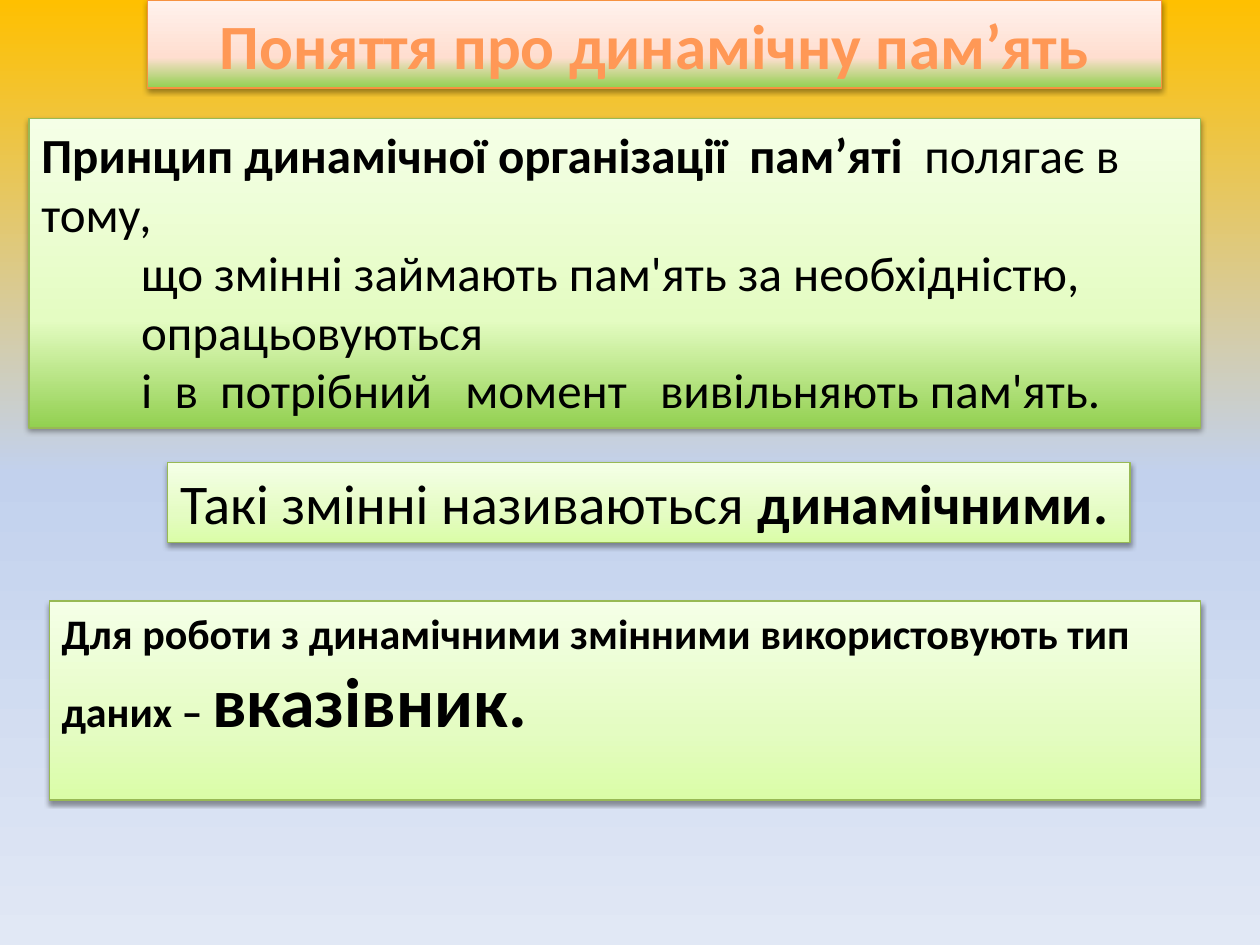
from lxml import etree
from pptx import Presentation
from pptx.dml.color import RGBColor
from pptx.enum import shapes, text
from pptx.oxml.ns import qn
from pptx.util import Pt

BLACK = RGBColor(0, 0, 0)
ORANGE = RGBColor(0xFF, 0x98, 0x56)
ORANGE_LINE = RGBColor(0xF6, 0x92, 0x40)
GREEN_LINE = RGBColor(0x98, 0xB9, 0x55)
GREEN = RGBColor(0x92, 0xD0, 0x50)
LIME = RGBColor(0xDA, 0xFD, 0xA7)
PALE_LIME = RGBColor(0xE4, 0xFC, 0xC2)
MIST = RGBColor(0xF5, 0xFF, 0xE7)
PEACH = RGBColor(0xFF, 0xDE, 0xD0)
BLUSH = RGBColor(0xFF, 0xF2, 0xED)
GOLD = RGBColor(0xFF, 0xC0, 0x00)
SKY = RGBColor(0xC2, 0xD1, 0xED)
PALE_SKY = RGBColor(0xE1, 0xE8, 0xF5)

TITLE_FILL = (0, GREEN), (35, PEACH), (100, BLUSH)
GREEN_FILL = (0, GREEN), (35, PALE_LIME), (100, MIST)
LIME_FILL = (0, LIME), (35, PALE_LIME), (100, MIST)
SKY_FILL = (0, GOLD), (50, SKY), (100, PALE_SKY)


def set_gradient(owner, element, stops, angle):
    """Fill with (percent, colour) stops; angle runs counter-clockwise."""
    owner.fill.gradient()
    owner.fill.gradient_angle = angle
    stop_list = next(element.iter(qn("a:gsLst")))
    for old in list(stop_list):
        stop_list.remove(old)
    for percent, color in stops:
        gs = etree.SubElement(stop_list, qn("a:gs"), pos=str(percent * 1000))
        etree.SubElement(gs, qn("a:srgbClr"), val=str(color))


def add_shadow(sp):
    sp.shadow.inherit = False
    effects = sp._element.spPr.find(qn("a:effectLst"))
    outer = etree.SubElement(effects, qn("a:outerShdw"), blurRad=str(Pt(3.1)),
                             dist=str(Pt(1.6)), dir="5400000", rotWithShape="0")
    color = etree.SubElement(outer, qn("a:srgbClr"), val=str(BLACK))
    etree.SubElement(color, qn("a:alpha"), val="38000")


def add_panel(s, box, stops, line, paragraphs, color=BLACK,
              align=text.PP_ALIGN.LEFT, anchor=text.MSO_ANCHOR.TOP):
    """Each paragraph is (left indent, [(words, size, bold), ...])."""
    sp = s.shapes.add_shape(shapes.MSO_SHAPE.RECTANGLE, *map(Pt, box))
    set_gradient(sp, sp._element, stops, 90)
    sp.line.color.rgb = line
    sp.line.width = Pt(0.75)
    add_shadow(sp)
    tf = sp.text_frame
    tf.word_wrap = True
    tf.vertical_anchor = anchor
    for i, (indent, runs) in enumerate(paragraphs):
        p = tf.add_paragraph() if i else tf.paragraphs[0]
        p.alignment = align
        if indent:
            p._p.get_or_add_pPr().set("marL", str(Pt(indent)))
        for words, size, bold in runs:
            r = p.add_run()
            r.text = words
            r.font.color.rgb = color
            for name, value in dict(name="Calibri", size=Pt(size), bold=bold).items():
                setattr(r.font, name, value)


def add_title(s, box):
    add_panel(s, box, TITLE_FILL, ORANGE_LINE,
              [(0, [("Поняття про динамічну пам’ять", 36, True)])],
              ORANGE, text.PP_ALIGN.CENTER, text.MSO_ANCHOR.MIDDLE)


def add_principle(s, box):
    details = ["що змінні займають пам'ять за необхідністю,",
               "опрацьовуються",
               "і  в  потрібний   момент   вивільняють пам'ять."]
    opening = [("Принцип динамічної організації  пам’яті", 28, True),
               ("  полягає в тому,", 28, False)]
    add_panel(s, box, GREEN_FILL, GREEN_LINE,
              [(0, opening)] + [(57, [(d, 28, False)]) for d in details])


def add_term(s, box):
    add_panel(s, box, LIME_FILL, GREEN_LINE,
              [(0, [("Такі змінні називаються ", 32, False),
                    ("динамічними.", 32, True)])])


def add_pointer_type(s, box):
    add_panel(s, box, LIME_FILL, GREEN_LINE,
              [(0, [("Для роботи з динамічними змінними використовують тип даних – ",
                     24, True), ("вказівник.", 40, True)])])


def main():
    prs = Presentation()
    prs.slide_width, prs.slide_height = Pt(720), Pt(540)
    s = prs.slides.add_slide(prs.slide_layouts[6])
    set_gradient(s.background, s._element, SKY_FILL, 270)
    add_title(s, (84.2, 0, 579.6, 50.4))
    add_principle(s, (16.6, 67.7, 669.6, 177))
    add_term(s, (95.8, 264.2, 550, 46))
    add_pointer_type(s, (28.1, 343.4, 658, 113.8))
    prs.save("out.pptx")


if __name__ == "__main__":
    main()
